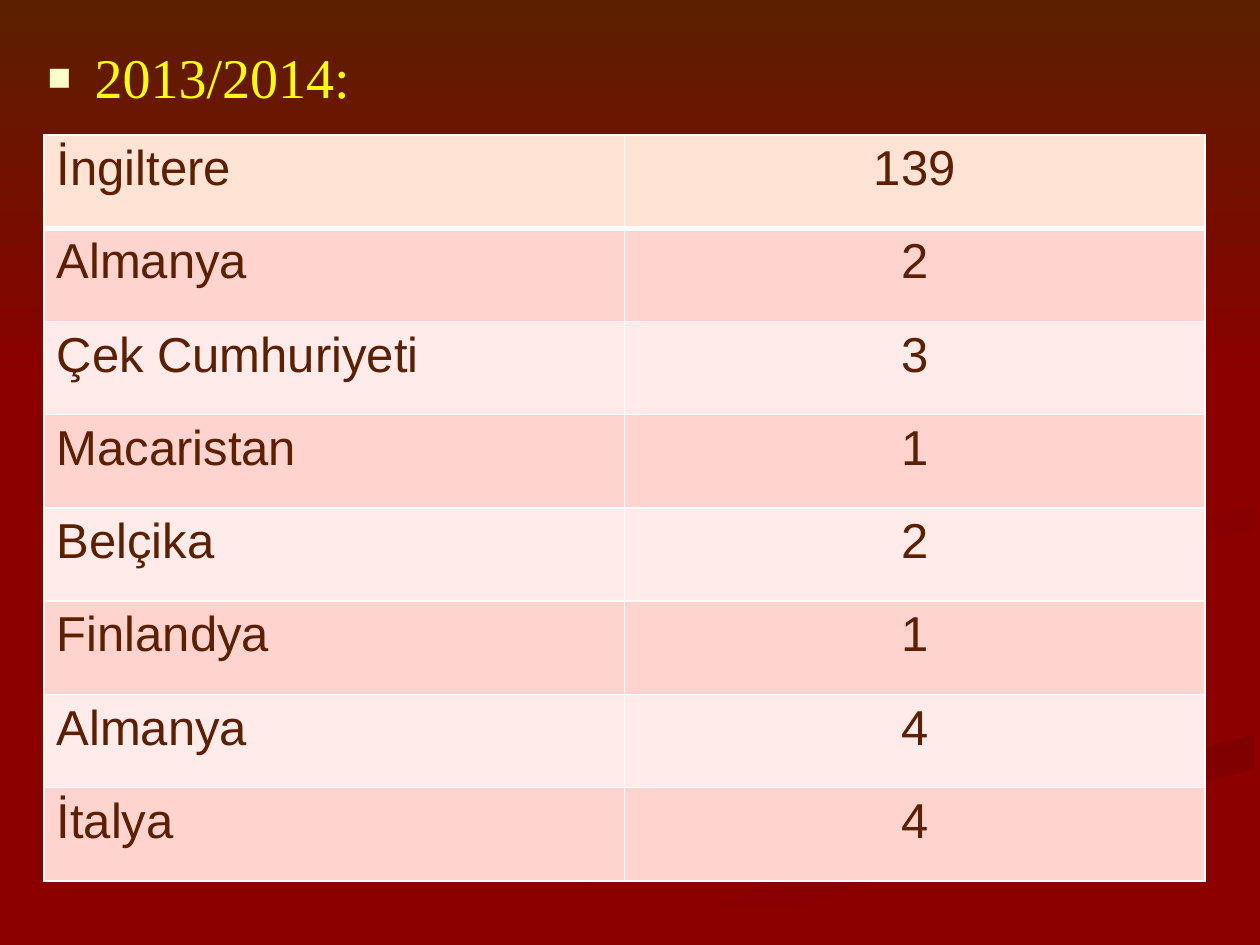
from lxml.etree import SubElement
from pptx import Presentation
from pptx.dml.color import RGBColor
from pptx.enum.shapes import MSO_SHAPE as Shape
from pptx.enum.text import PP_ALIGN as Align
from pptx.oxml import parse_xml
from pptx.oxml.ns import nsdecls, qn
from pptx.util import Cm, Pt

DARK_RED, BROWN, WHITE = "8C0000", "5C1F00", "FFFFFF"


def color(code):
    return RGBColor.from_string(code)


def paint(shape, start, end, angle):
    """Give a borderless shape a two-stop gradient; angle runs clockwise."""
    shape.shadow.inherit = False
    shape.line.fill.background()
    shape.fill.gradient()
    shape.fill.gradient_angle = -angle % 360
    for stop, code in zip(shape.fill.gradient_stops, (start, end)):
        stop.color.rgb = color(code)


prs = Presentation()
prs.slide_width, prs.slide_height = Cm(25.4), Cm(19.05)
slide = prs.slides.add_slide(prs.slide_layouts[6])
slide.background.fill.solid()
slide.background.fill.fore_color.rgb = color(DARK_RED)

# Ribbons that show around the table: colours, angle, outline in millimetres
ribbons = [
    (DARK_RED, "860000", 0,
     [(76, 190), (106, 175), (147, 162), (198, 148), (203, 148),
      (165, 164), (118, 178), (92, 190)]),
    ("800000", DARK_RED, 90,
     [(128, 190), (160, 176), (198, 163), (253, 148), (253, 155),
      (191, 171), (145, 190)]),
    ("840000", DARK_RED, 45,
     [(198, 117), (206, 111), (253, 102), (253, 107), (214, 114), (210, 126)]),
]
for start, end, angle, outline in ribbons:
    builder = slide.shapes.build_freeform(*outline[0], scale=Cm(0.1))
    builder.add_line_segments(outline[1:], close=True)
    paint(builder.convert_to_shape(), start, end, angle)

top_glow = slide.shapes.add_shape(Shape.RECTANGLE, 0, 0, Cm(25.4), Cm(7.82))
paint(top_glow, BROWN, DARK_RED, 90)

# Season heading
heading = slide.shapes.add_textbox(Cm(0.71), Cm(0.74), Cm(23.6), Cm(17.4))
heading.text_frame.word_wrap = True
season = heading.text_frame.paragraphs[0]
season.text = "2013/2014:"
season.space_before = Pt(6.4)
season.font.name, season.font.size = "Times New Roman", Pt(32)
season.font.color.rgb = color("FFFF00")
bullet = season._p.get_or_add_pPr()
bullet.set("marL", str(Cm(0.95)))
bullet.set("indent", str(-Cm(0.95)))
for position, part in enumerate((
        f'<a:buClr {nsdecls("a")}><a:srgbClr val="FFFFCC"/></a:buClr>',
        f'<a:buSzPct {nsdecls("a")} val="70000"/>',
        f'<a:buFont {nsdecls("a")} typeface="Arial"/>',
        f'<a:buChar {nsdecls("a")} char="■"/>'), start=1):
    bullet.insert(position, parse_xml(part))

# Country counts
counts = [
    ("İngiltere", 139), ("Almanya", 2), ("Çek Cumhuriyeti", 3),
    ("Macaristan", 1), ("Belçika", 2), ("Finlandya", 1),
    ("Almanya", 4), ("İtalya", 4),
]
table = slide.shapes.add_table(len(counts), 2, Cm(0.89), Cm(2.72),
                               Cm(23.4), Cm(15.04)).table
table.first_row = table.horz_banding = False
for r, entry in enumerate(counts):
    table.rows[r].height = Cm(1.88)
    band = "FFE3D5" if r == 0 else ("FFEBE9", "FFD4CF")[r % 2]
    for c, value in enumerate(entry):
        cell = table.cell(r, c)
        cell.fill.solid()
        cell.fill.fore_color.rgb = color(band)
        label = cell.text_frame.paragraphs[0]
        label.text = str(value)
        label.alignment = (Align.LEFT, Align.CENTER)[c]
        label.font.name, label.font.size = "Arial", Pt(28)
        label.font.color.rgb = color(BROWN)
        borders = cell._tc.get_or_add_tcPr()
        for position, side in enumerate(("lnL", "lnR", "lnT", "lnB")):
            under_first = (r, side) in ((0, "lnB"), (1, "lnT"))
            edge = SubElement(borders, qn(f"a:{side}"),
                              w=str(Pt(3 if under_first else 1)))
            solid = SubElement(edge, qn("a:solidFill"))
            SubElement(solid, qn("a:srgbClr"), val=WHITE)
            borders.insert(position, edge)

prs.save("out.pptx")
